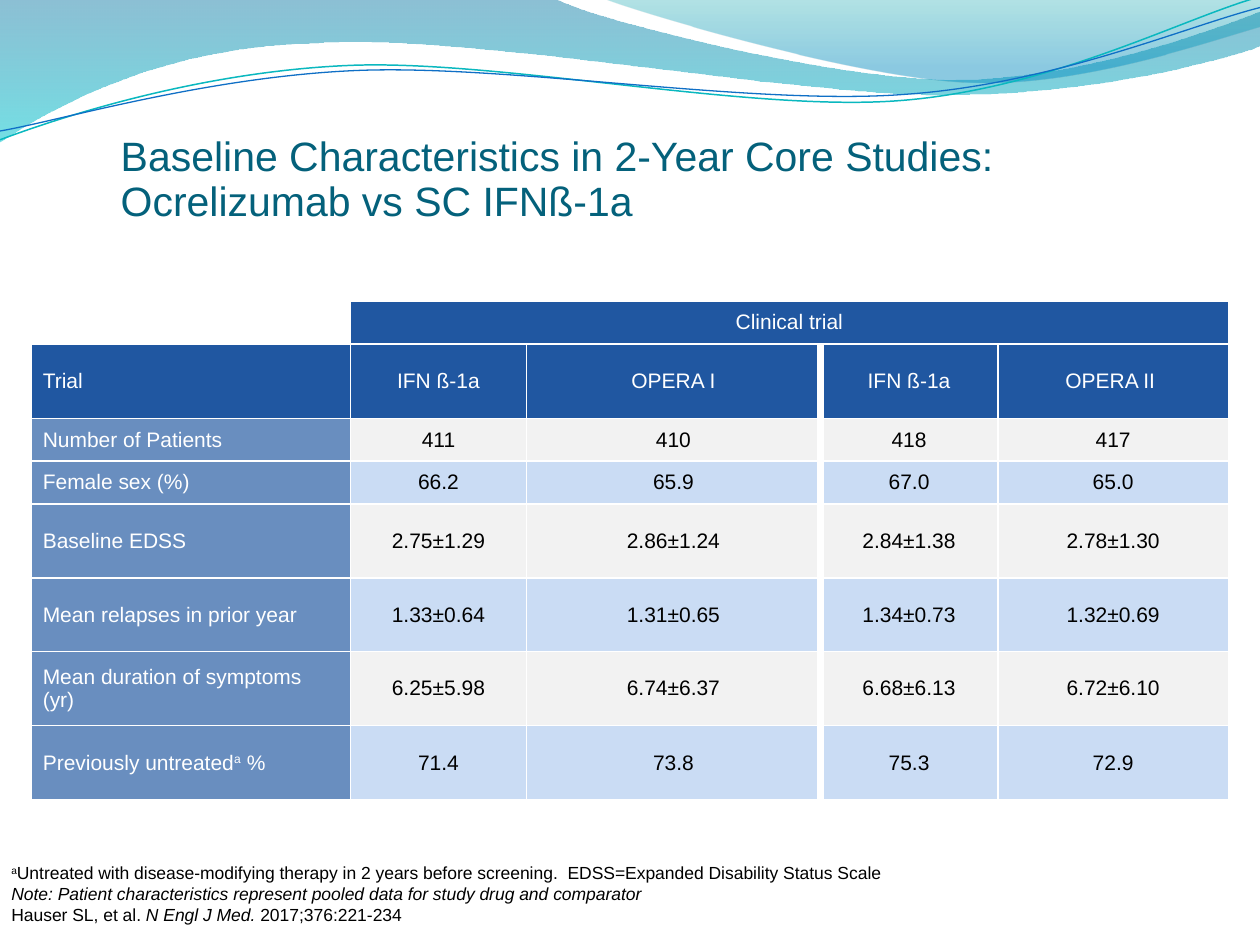
from lxml.etree import SubElement
from pptx import Presentation
from pptx.dml.color import RGBColor
from pptx.enum.shapes import MSO_SHAPE
from pptx.enum.text import MSO_ANCHOR, PP_ALIGN
from pptx.oxml import parse_xml
from pptx.oxml.ns import nsdecls, qn
from pptx.util import Inches, Pt

# The page is a grid of 10 columns by 7.5 rows; all lengths are in grid units.
COLUMNS, ROWS = 10, 7.5
UNIT = Inches(1)
FONT = "Arial"
COLORS = {
    "white": "FFFFFF", "black": "000000", "title": "04617B",
    "header": "2057A1", "light": "F2F2F2", "band": "CADCF4",
    "deep": "0074A1", "cyan": "00C6CF", "teal": "00A1A9", "sky": "008BBF",
    "teal line": "0AB8BF", "blue line": "0F6FC6",
}

# Each wave: a start point, then curves (6 numbers) and straight lines (2).
WIDE_WAVE = [(0, 0), (4.4, -0.01), (4.76, 0.17, 6.64, 0.63, 7.58, 0.63),
             (8.53, 0.63, 9.58, 0.26, 10, 0.09), (10.01, 0.36),
             (9.83, 0.44, 8.7, 0.76, 7.46, 0.75),
             (6.22, 0.75, 3.82, 0.28, 2.57, 0.34),
             (1.29, 0.36, 0.46, 0.83, -0.01, 1.13)]
RIGHT_WAVE = [(4.79, -0.01), (5.09, 0.11, 6.82, 0.62, 7.69, 0.65),
              (8.56, 0.69, 9.61, 0.32, 10, 0.21), (10, 0)]
TEAL_LINE = [(0, 1.11), (0.48, 0.93, 1.58, 0.57, 2.77, 0.52),
             (3.95, 0.47, 5.93, 0.89, 7.13, 0.8),
             (8.33, 0.71, 9.38, 0.15, 9.98, -0.02)]
BLUE_LINE = [(0, 1.04), (0.47, 0.96, 1.64, 0.61, 2.83, 0.56),
             (4.03, 0.51, 5.97, 0.84, 7.17, 0.75),
             (8.36, 0.67, 9.41, 0.21, 10, 0.06)]

COLUMN_WIDTHS = [2.53, 1.4, 2.33, 1.41, 1.83]
ROW_HEIGHTS = [0.34, 0.59, 0.34, 0.34, 0.59, 0.58, 0.59, 0.59]
TABLE_ROWS = [
    ["", "Clinical trial", "", "", ""],
    ["Trial", "IFN ß-1a", "OPERA I", "IFN ß-1a", "OPERA II "],
    ["Number of Patients", "411", "410", "418", "417"],
    ["Female sex (%)", "66.2", "65.9", "67.0", "65.0"],
    ["Baseline EDSS", "2.75±1.29", "2.86±1.24", "2.84±1.38", "2.78±1.30"],
    ["Mean relapses in prior year",
     "1.33±0.64", "1.31±0.65", "1.34±0.73", "1.32±0.69"],
    ["Mean duration of symptoms (yr)",
     "6.25±5.98", "6.74±6.37", "6.68±6.13", "6.72±6.10"],
    ["Previously untreated^a^ %", "71.4", "73.8", "75.3", "72.9"],
]
# Marks: ^raised^ and _italic_.
FOOTNOTES = [
    "^a^Untreated with disease-modifying therapy in 2 years before screening.  "
    "EDSS=Expanded Disability Status Scale",
    "_Note: Patient characteristics represent pooled data for study drug "
    "and comparator_",
    "Hauser SL, et al. _N Engl J Med. _2017;376:221-234",
]
TITLE = ("Baseline Characteristics in 2-Year Core Studies:\n"
         "Ocrelizumab vs SC IFNß-1a")


def color(name):
    return RGBColor.from_string(COLORS[name])


def grid(*lengths):
    return [round(length * UNIT) for length in lengths]


def set_alpha(element, percents):
    for node, percent in zip(element.iter(qn("a:srgbClr")), percents):
        SubElement(node, qn("a:alpha"), val=str(percent * 1000))


def write(para, text, size, color_name):
    """Fill a paragraph, reading the marks for raised and italic spans."""
    para.font.name, para.font.size = FONT, Pt(size)
    para.font.color.rgb = color(color_name)
    for number, line in enumerate(text.split("\n")):
        if number:
            para.add_line_break()
        for raised, part in enumerate(line.split("^")):
            for italic, words in enumerate(part.split("_")):
                if not words:
                    continue
                span = para.add_run()
                span.text = words
                if italic % 2:
                    span.font.italic = True
                if raised % 2:
                    span.font._element.set("baseline", "30000")


def add_curve(page, box, path, closed):
    """Build an outline through the end points, then bend its curved parts."""
    points = [grid(box[0] + p[-2], box[1] + p[-1]) for p in path]
    builder = page.shapes.build_freeform(*points[0], scale=1.0)
    builder.add_line_segments(points[1:], close=closed)
    curve = builder.convert_to_shape()
    curve.shadow.inherit = False
    segments = list(curve._element.iter(qn("a:lnTo")))
    for node, segment in zip(segments, path[1:]):
        if len(segment) == 2:
            continue
        node.tag = qn("a:cubicBezTo")
        controls = zip(segment[0:4:2], segment[1:4:2])
        for index, (x, y) in enumerate(controls):
            left, top = grid(box[0] + x, box[1] + y)
            node.insert(index, parse_xml(
                f'<a:pt {nsdecls("a")} x="{left - curve.left}" '
                f'y="{top - curve.top}"/>'))
    return curve


def add_waves(page, box):
    # Translucent gradient waves
    for path, stops in (
        (WIDE_WAVE, [(0, "deep", 45), (1, "cyan", 55)]),
        (RIGHT_WAVE, [(0, "teal", 30), (0.8, "sky", 45)]),
    ):
        wave = add_curve(page, box, path, True)
        wave.line.fill.background()
        wave.fill.gradient()
        wave.fill.gradient_angle = 270
        for stop, (position, name, _) in zip(wave.fill.gradient_stops, stops):
            stop.position = position
            stop.color.rgb = color(name)
        set_alpha(wave._element.spPr, [alpha for _, _, alpha in stops])
    # Thin lines
    for path, name, width in ((TEAL_LINE, "teal line", 0.85),
                              (BLUE_LINE, "blue line", 0.75)):
        line = add_curve(page, box, path, False)
        line.fill.background()
        line.line.color.rgb = color(name)
        line.line.width = Pt(width)


def add_borders(cell, column):
    widths = {"L": 4.5 if column == 3 else 1, "R": 4.5 if column == 2 else 1,
              "T": 1, "B": 1}
    properties = cell._tc.get_or_add_tcPr()
    for index, (side, width) in enumerate(widths.items()):
        properties.insert(index, parse_xml(
            f'<a:ln{side} {nsdecls("a")} w="{Pt(width)}"><a:solidFill>'
            f'<a:srgbClr val="{COLORS["white"]}"/></a:solidFill></a:ln{side}>'))


def cell_fill(row, column):
    if row == 0 and column == 0:
        return "white"
    if row < 2 or column == 0:
        return "header"
    return "band" if row % 2 else "light"


def add_trial_table(page, box):
    table = page.shapes.add_table(
        len(ROW_HEIGHTS), len(COLUMN_WIDTHS), *grid(*box)).table
    for column, width in zip(table.columns, grid(*COLUMN_WIDTHS)):
        column.width = width
    for row, height in zip(table.rows, grid(*ROW_HEIGHTS)):
        row.height = height
    table.cell(0, 1).merge(table.cell(0, 4))
    for r, texts in enumerate(TABLE_ROWS):
        for c, text in enumerate(texts):
            cell = table.cell(r, c)
            cell.vertical_anchor = MSO_ANCHOR.MIDDLE
            cell.margin_left = cell.margin_right = grid(0.09)[0]
            cell.margin_top = cell.margin_bottom = grid(0.05)[0]
            cell.fill.solid()
            cell.fill.fore_color.rgb = color(cell_fill(r, c))
            if c == 0 and r > 1:
                set_alpha(cell._tc.tcPr, [67])
            add_borders(cell, c)
            para = cell.text_frame.paragraphs[0]
            para.alignment = PP_ALIGN.CENTER if c else PP_ALIGN.LEFT
            write(para, text, 12, "black" if r > 1 and c else "white")


def add_footnotes(page, box):
    note = page.shapes.add_shape(MSO_SHAPE.RECTANGLE, *grid(*box))
    note.shadow.inherit = False
    note.fill.solid()
    note.fill.fore_color.rgb = color("white")
    note.line.fill.background()
    frame = note.text_frame
    frame.word_wrap, frame.vertical_anchor = True, MSO_ANCHOR.TOP
    frame.margin_left = frame.margin_right = 0
    frame.margin_top = frame.margin_bottom = 0
    for index, text in enumerate(FOOTNOTES):
        para = frame.add_paragraph() if index else frame.paragraphs[0]
        para.alignment = PP_ALIGN.LEFT
        write(para, text, 10, "black")


def add_title(page, box):
    frame = page.shapes.add_textbox(*grid(*box)).text_frame
    frame.word_wrap, frame.vertical_anchor = True, MSO_ANCHOR.MIDDLE
    para = frame.paragraphs[0]
    para.line_spacing = 0.9
    write(para, TITLE, 23.4, "title")


deck = Presentation()
deck.slide_width, deck.slide_height = grid(COLUMNS, ROWS)
page = deck.slides.add_slide(deck.slide_layouts[6])
add_waves(page, (0, 0))
add_trial_table(page, (0.25, 2.39, 9.5, 3.96))
add_footnotes(page, (0.09, 6.84, 7.13, 0.47))
add_title(page, (0.86, 1.01, 8.72, 0.85))
deck.save("out.pptx")
